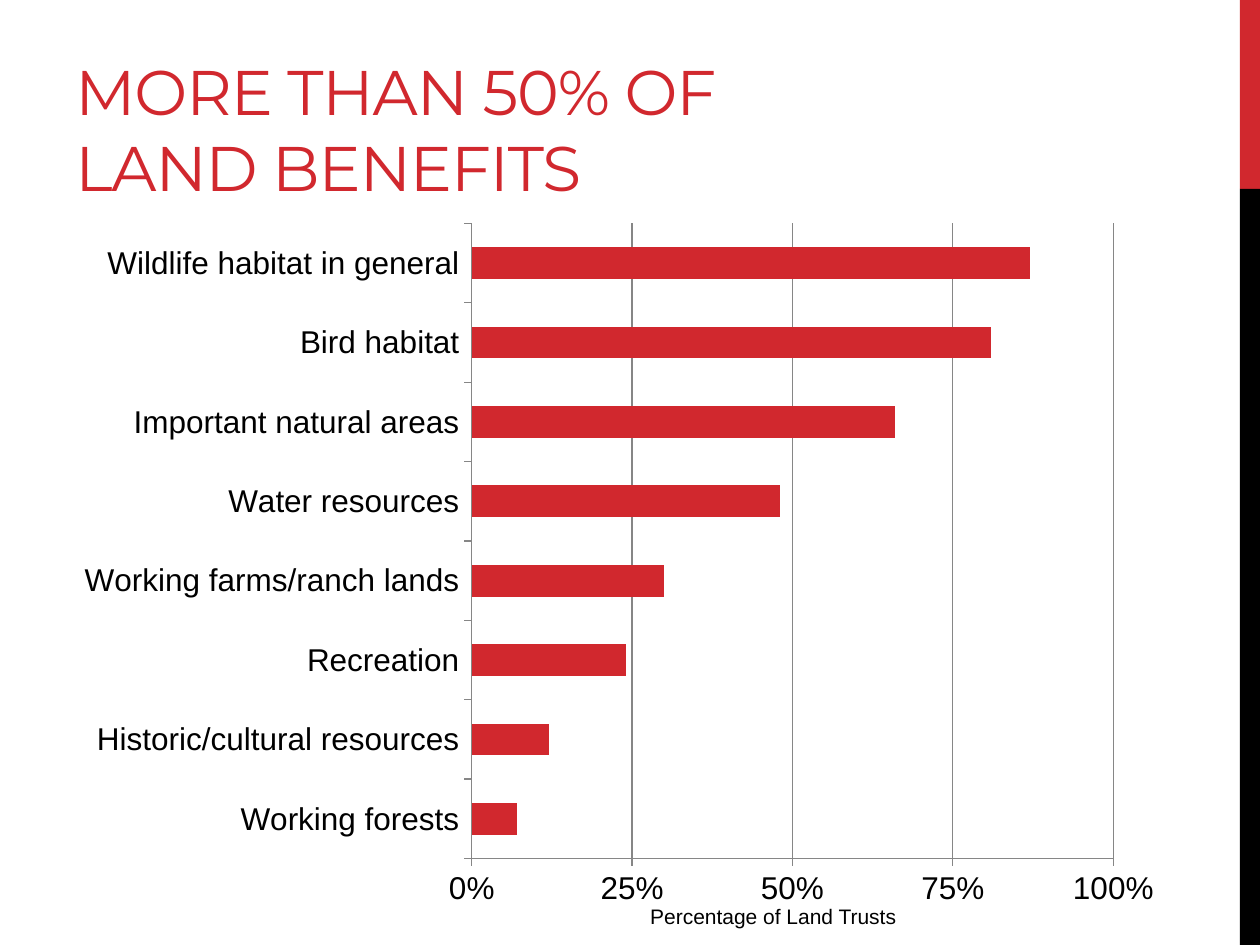
from lxml import etree
from pptx import Presentation
from pptx.chart.data import CategoryChartData
from pptx.dml.color import RGBColor
from pptx.enum.chart import XL_CHART_TYPE, XL_TICK_MARK
from pptx.enum.shapes import MSO_SHAPE
from pptx.enum.text import MSO_ANCHOR, PP_ALIGN
from pptx.oxml import parse_xml
from pptx.oxml.ns import nsdecls, qn
from pptx.util import Pt

COLORS = {"red": "D1282E", "black": "000000", "white": "FFFFFF", "grid": "868686"}

BENEFITS = {
    "Working forests": 0.07,
    "Historic/cultural resources": 0.12,
    "Recreation": 0.24,
    "Working farms/ranch lands": 0.30,
    "Water resources": 0.48,
    "Important natural areas": 0.66,
    "Bird habitat": 0.81,
    "Wildlife habitat in general": 0.87,
}


def color(name):
    return RGBColor.from_string(COLORS[name])


def style_font(font, name, size, color_name):
    font.name = name
    font.size = Pt(size)
    font.color.rgb = color(color_name)


def add_side_band(slide, left, top, width, height):
    """Red block over a black block; the red takes the top fifth."""
    red_height = height / 5
    parts = [("red", top, red_height), ("black", top + red_height, height - red_height)]
    for color_name, part_top, part_height in parts:
        shape = slide.shapes.add_shape(
            MSO_SHAPE.RECTANGLE, Pt(left), Pt(part_top), Pt(width), Pt(part_height))
        shape.shadow.inherit = False
        shape.fill.solid()
        shape.fill.fore_color.rgb = color(color_name)
        shape.line.fill.background()


def add_text(slide, left, top, width, height, text, font_name, size, color_name):
    text_box = slide.shapes.add_textbox(Pt(left), Pt(top), Pt(width), Pt(height))
    text_box.text_frame.word_wrap = True
    paragraph = text_box.text_frame.paragraphs[0]
    paragraph.text = text
    style_font(paragraph.font, font_name, size, color_name)
    return text_box.text_frame


def add_title(slide, left, top, width, height):
    frame = add_text(slide, left, top, width, height,
                     "MORE THAN 50% OF LAND BENEFITS", "Montserrat", 36, "red")
    frame.vertical_anchor = MSO_ANCHOR.BOTTOM
    # Letter spacing in hundredths of a point
    run = frame.paragraphs[0].runs[0]
    run._r.get_or_add_rPr().set("spc", "-60")


def set_plot_layout(chart, x, y, w, h):
    """Fix the inner plot area, in fractions of the chart."""
    plot_area = chart._chartSpace.chart.plotArea
    for layout in plot_area.findall(qn("c:layout")):
        plot_area.remove(layout)
    layout = parse_xml(f"<c:layout {nsdecls('c')}><c:manualLayout/></c:layout>")
    settings = {"layoutTarget": "inner", "xMode": "edge", "yMode": "edge",
                "x": x, "y": y, "w": w, "h": h}
    for tag, value in settings.items():
        etree.SubElement(layout[0], qn(f"c:{tag}")).set("val", str(value))
    plot_area.insert(0, layout)


def add_benefits_chart(slide, left, top, width, height):
    chart_data = CategoryChartData(number_format="0%")
    chart_data.categories = list(BENEFITS)
    chart_data.add_series("Series 1", list(BENEFITS.values()))
    chart = slide.shapes.add_chart(
        XL_CHART_TYPE.BAR_CLUSTERED, Pt(left), Pt(top), Pt(width), Pt(height),
        chart_data).chart
    chart.has_legend = False
    chart.has_title = False
    style_font(chart.font, "Arial", 18, "black")

    # Bars
    plot = chart.plots[0]
    plot.gap_width = 150
    plot.vary_by_categories = False
    bar_fill = plot.series[0].format.fill
    bar_fill.solid()
    bar_fill.fore_color.rgb = color("red")

    # Axes and gridlines
    value_axis = chart.value_axis
    value_axis.minimum_scale = 0
    value_axis.maximum_scale = 1
    value_axis.major_unit = 0.25
    value_axis.has_major_gridlines = True
    value_axis.tick_labels.number_format = "0%"
    value_axis.tick_labels.number_format_is_linked = False
    for axis in (value_axis, chart.category_axis):
        axis.major_tick_mark = XL_TICK_MARK.OUTSIDE
        axis.minor_tick_mark = XL_TICK_MARK.NONE
    for line in (value_axis.format.line, chart.category_axis.format.line,
                 value_axis.major_gridlines.format.line):
        line.color.rgb = color("grid")
        line.width = Pt(0.75)
    set_plot_layout(chart, 0.367, 0.019, 0.576, 0.894)

    # Caption below the value axis
    caption = add_text(slide, left + 256.5, top + 392.5, 298.8, 27,
                       "Percentage of Land Trusts", "Arial", 12, "black")
    caption.paragraphs[0].alignment = PP_ALIGN.CENTER


def main():
    presentation = Presentation()
    presentation.slide_width = Pt(720)
    presentation.slide_height = Pt(540)
    slide = presentation.slides.add_slide(presentation.slide_layouts[6])
    slide.background.fill.solid()
    slide.background.fill.fore_color.rgb = color("white")

    add_side_band(slide, 708.5, 0, 11.5, 540)
    add_title(slide, 36, 12, 456, 108)
    add_benefits_chart(slide, 36, 120, 636.5, 406)
    presentation.save("out.pptx")


if __name__ == "__main__":
    main()
